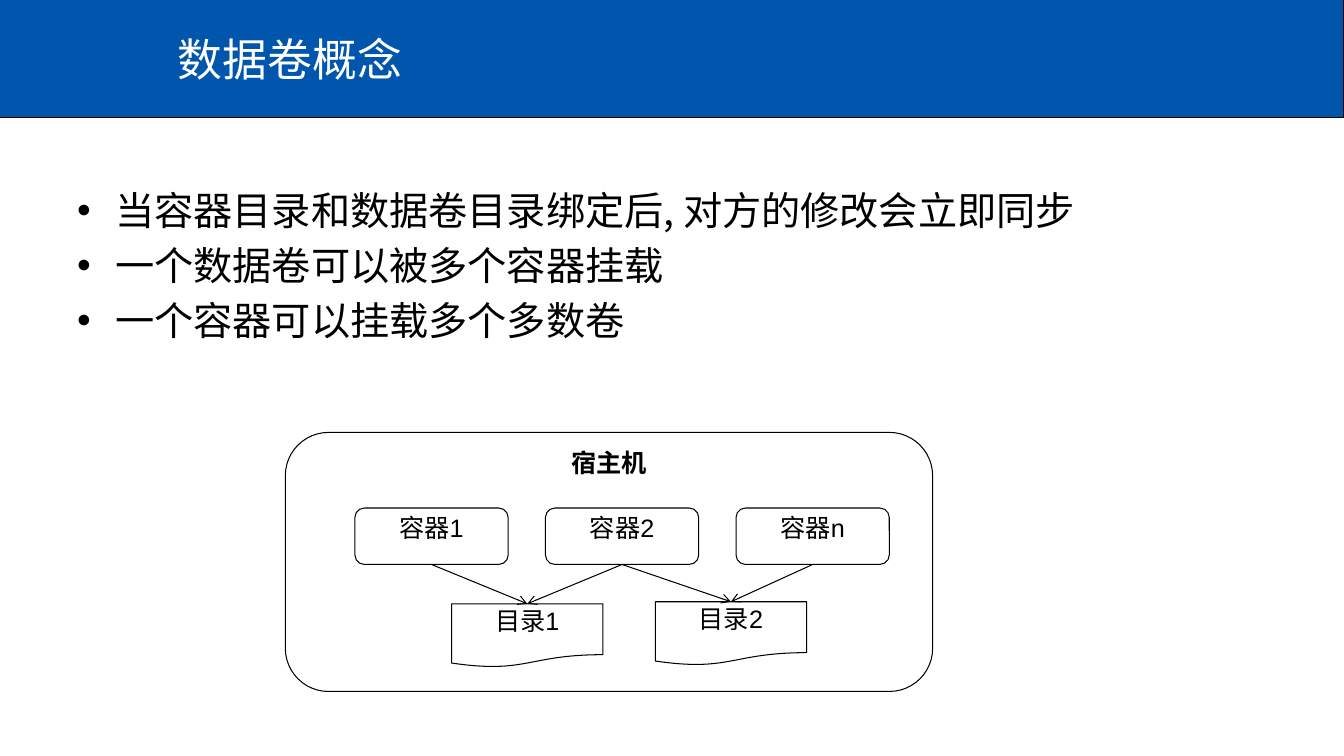
"""Build the slide that explains the concept of data volumes."""
from lxml import etree
from pptx import Presentation
from pptx.dml.color import RGBColor
from pptx.enum.shapes import MSO_CONNECTOR, MSO_SHAPE
from pptx.enum.text import MSO_ANCHOR, PP_ALIGN
from pptx.oxml.ns import qn
from pptx.util import Inches, Pt

TITLE = "数据卷概念"
POINTS = [
    "当容器目录和数据卷目录绑定后, 对方的修改会立即同步",
    "一个数据卷可以被多个容器挂载",
    "一个容器可以挂载多个多数卷",
]
HOST = "宿主机"
CONTAINERS = ["容器1", "容器2", "容器n"]
DIRECTORIES = [("目录1", 5.99), ("目录2", 5.97)]
MOUNTS = [(0, 0), (1, 0), (2, 1), (1, 1)]

WIDTH, HEIGHT = 13.33, 7.5
CONTAINER_LEFT, CONTAINER_TOP, CONTAINER_STEP = 3.52, 5.04, 1.89
DIRECTORY_LEFT, DIRECTORY_STEP = 4.48, 2.02
BLUE, WHITE, BLACK = "0056AC", "FFFFFF", "000000"
LATIN, CHINESE = "Arial", "Noto Sans CJK SC"
RECTANGLE, ROUNDED = MSO_SHAPE.RECTANGLE, MSO_SHAPE.ROUNDED_RECTANGLE
DOCUMENT = MSO_SHAPE.FLOWCHART_DOCUMENT
STRAIGHT = MSO_CONNECTOR.STRAIGHT
TOP, MIDDLE = MSO_ANCHOR.TOP, MSO_ANCHOR.MIDDLE
LEFT, CENTER = PP_ALIGN.LEFT, PP_ALIGN.CENTER
TOP_SITE, BOTTOM_SITE = 0, 2


def color(value):
    return RGBColor.from_string(value)


def add_bullet(para):
    properties = para._p.get_or_add_pPr()
    properties.set("marL", str(Inches(0.38)))
    properties.set("indent", str(Inches(-0.38)))
    etree.SubElement(properties, qn("a:buFont")).set("typeface", LATIN)
    etree.SubElement(properties, qn("a:buChar")).set("char", "•")


def write(box, lines, size=18, font=LATIN, fill=BLACK, bold=False,
          align=CENTER, anchor=TOP, bullet=False, spacing=None, inset=0.02):
    frame = box.text_frame
    frame.word_wrap = True
    frame.vertical_anchor = anchor
    frame.margin_top = Inches(inset)
    for index, line in enumerate(lines):
        para = frame.add_paragraph() if index else frame.paragraphs[0]
        para.alignment = align
        if spacing:
            para.line_spacing = Pt(spacing)
        if bullet:
            add_bullet(para)
        span = para.add_run()
        span.text = line
        span.font.size = Pt(size)
        span.font.bold = bold
        span.font.name = font
        span.font.color.rgb = color(fill)
        east_asian = etree.Element(qn("a:ea"), typeface=CHINESE)
        span._r.rPr.find(qn("a:latin")).addnext(east_asian)


def add_box(page, kind, area, fill=WHITE):
    box = page.shapes.add_shape(kind, *map(Inches, area))
    box.shadow.inherit = False
    box.fill.solid()
    box.fill.fore_color.rgb = color(fill)
    box.line.color.rgb = color(BLACK)
    box.line.width = Pt(0.75)
    return box


def add_arrow(page, start, end):
    arrow = page.shapes.add_connector(STRAIGHT, 0, 0, 0, 0)
    arrow.begin_connect(start, BOTTOM_SITE)
    arrow.end_connect(end, TOP_SITE)
    arrow.line.color.rgb = color(BLACK)
    arrow.line.width = Pt(0.75)
    etree.SubElement(arrow.line._get_or_add_ln(), qn("a:tailEnd")).set("type", "arrow")
    etree.SubElement(arrow._element.spPr, qn("a:effectLst"))


def add_diagram(page):
    host = add_box(page, ROUNDED, (2.83, 4.29, 6.42, 2.57))
    write(host, [HOST], bold=True)
    containers, directories = [], []
    for column, label in enumerate(CONTAINERS):
        left = CONTAINER_LEFT + column * CONTAINER_STEP
        box = add_box(page, ROUNDED, (left, CONTAINER_TOP, 1.52, 0.56))
        write(box, [label])
        containers.append(box)
    for column, (label, top) in enumerate(DIRECTORIES):
        left = DIRECTORY_LEFT + column * DIRECTORY_STEP
        box = add_box(page, DOCUMENT, (left, top, 1.5, 0.63))
        write(box, [label])
        directories.append(box)
    for container, directory in MOUNTS:
        add_arrow(page, containers[container], directories[directory])


def main():
    deck = Presentation()
    deck.slide_width, deck.slide_height = Inches(WIDTH), Inches(HEIGHT)
    page = deck.slides.add_slide(deck.slide_layouts[6])
    add_box(page, RECTANGLE, (0, 0, WIDTH, 1.17), BLUE)
    title = page.shapes.add_textbox(*map(Inches, (WIDTH / 8, 0.08, WIDTH * 7 / 8, 1)))
    write(title, [TITLE], size=32, fill=WHITE, align=LEFT, anchor=MIDDLE, inset=0.05)
    body = page.shapes.add_textbox(*map(Inches, (WIDTH / 20, 1.75, WIDTH * 0.9, 4.95)))
    write(body, POINTS, size=28, font=CHINESE, align=LEFT, bullet=True, spacing=39.3)
    add_diagram(page)
    deck.save("out.pptx")


if __name__ == "__main__":
    main()
